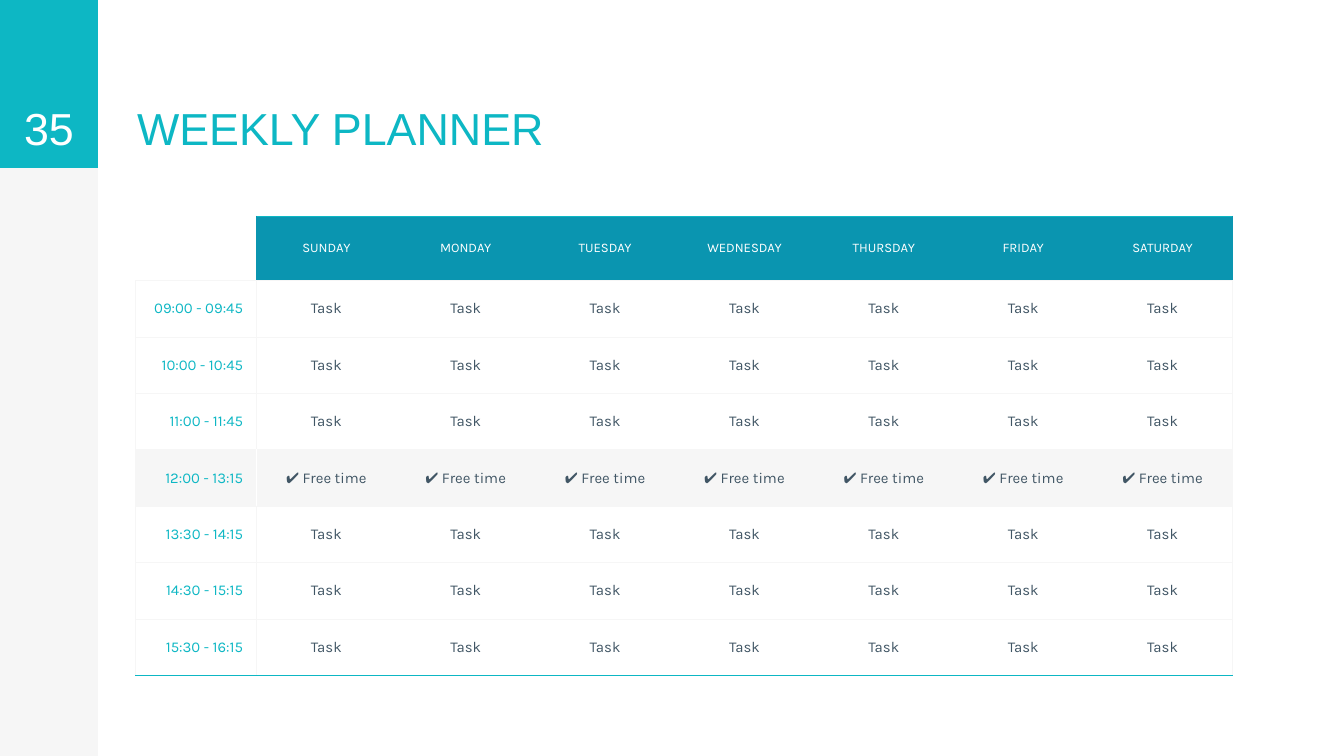
from dataclasses import dataclass
from typing import Optional

from lxml import etree
from pptx import Presentation
from pptx.dml.color import RGBColor
from pptx.enum.shapes import MSO_SHAPE
from pptx.enum.text import MSO_ANCHOR, MSO_AUTO_SIZE, PP_ALIGN
from pptx.oxml.ns import qn
from pptx.util import Inches, Pt

TEAL = RGBColor(0x0D, 0xB7, 0xC4)
DARK_TEAL = RGBColor(0x0A, 0x95, 0xB0)
PALE = RGBColor(0xF6, 0xF6, 0xF6)
SLATE = RGBColor(0x41, 0x56, 0x65)
WHITE = RGBColor(0xFF, 0xFF, 0xFF)

LEFT, CENTER, RIGHT = PP_ALIGN.LEFT, PP_ALIGN.CENTER, PP_ALIGN.RIGHT
RECT = MSO_SHAPE.RECTANGLE
BOTTOM, MIDDLE = MSO_ANCHOR.BOTTOM, MSO_ANCHOR.MIDDLE
NO_STYLE = "{2D5ABB26-0587-4C30-8999-92F81FD0307C}"

DAYS = ["SUNDAY", "MONDAY", "TUESDAY", "WEDNESDAY", "THURSDAY", "FRIDAY", "SATURDAY"]

SLIDE_W = 10
SLIDE_H = SLIDE_W * 9 / 16
SIDEBAR_W, HEADER_H = 0.73, 1.25
PLANNER_W, TIME_W = 8.16, 0.9
DAY_W = (PLANNER_W - TIME_W) / len(DAYS)
DAYS_H, SLOT_H = 0.48, 0.42


@dataclass
class Slot:
    time: str
    activity: str = "Task"
    fill: Optional[RGBColor] = None
    divider: RGBColor = PALE
    bottom: RGBColor = PALE


SLOTS = [
    Slot("09:00 - 09:45"),
    Slot("10:00 - 10:45"),
    Slot("11:00 - 11:45"),
    Slot("12:00 - 13:15", "✔ Free time", fill=PALE, divider=WHITE),
    Slot("13:30 - 14:15"),
    Slot("14:30 - 15:15"),
    Slot("15:30 - 16:15", bottom=TEAL),
]


def add_panel(s, height: float, color: RGBColor) -> None:
    sp = s.shapes.add_shape(RECT, 0, 0, Inches(SIDEBAR_W), Inches(height))
    sp.shadow.inherit = False
    sp.fill.solid()
    sp.fill.fore_color.rgb = color
    sp.line.fill.background()


def set_text(tf, text: str, size: float, font: str, color: RGBColor, align) -> None:
    p = tf.paragraphs[0]
    p.text = text
    p.alignment = align
    p.font.size = Pt(size)
    p.font.name = font
    p.font.color.rgb = color


def set_heading(sp, left: float, top: float, width: float, text: str,
                color: RGBColor, align) -> None:
    """Place a bottom-anchored heading in the top band."""
    sp.left, sp.top = Inches(left), Inches(top)
    sp.width, sp.height = Inches(width), Inches(HEADER_H)
    tf = sp.text_frame
    tf.word_wrap = True
    tf.auto_size = MSO_AUTO_SIZE.NONE
    tf.vertical_anchor = BOTTOM
    tf.margin_left = tf.margin_right = tf.margin_top = tf.margin_bottom = Inches(0.1)
    set_text(tf, text, 24, "Arial", color, align)


def set_borders(cell, **colors: Optional[RGBColor]) -> None:
    """Draw the sides given as L, R, T and B; other sides have no line."""
    tc_pr = cell._tc.get_or_add_tcPr()
    for side in "LRTB":
        ln = etree.SubElement(tc_pr, qn(f"a:ln{side}"), w=str(Pt(0.75)))
        color = colors.get(side)
        if color is None:
            etree.SubElement(ln, qn("a:noFill"))
        else:
            fill = etree.SubElement(ln, qn("a:solidFill"))
            etree.SubElement(fill, qn("a:srgbClr"), val=str(color))


def set_cell(cell, text: str, size: float, color: RGBColor, align,
             fill: Optional[RGBColor]) -> None:
    cell.margin_left = cell.margin_right = Inches(0.1)
    cell.margin_top = cell.margin_bottom = Inches(0.1)
    cell.vertical_anchor = MIDDLE
    set_text(cell.text_frame, text, size, "Karla", color, align)
    if fill is None:
        cell.fill.background()
    else:
        cell.fill.solid()
        cell.fill.fore_color.rgb = fill


def add_planner(s, left: float, top: float) -> None:
    height = DAYS_H + SLOT_H * len(SLOTS)
    table = s.shapes.add_table(len(SLOTS) + 1, len(DAYS) + 1, Inches(left),
                               Inches(top), Inches(PLANNER_W), Inches(height)).table
    table.first_row = table.horz_banding = False
    table._tbl.tblPr.find(qn("a:tableStyleId")).text = NO_STYLE
    for i, column in enumerate(table.columns):
        column.width = Inches(DAY_W if i else TIME_W)
    for i, row in enumerate(table.rows):
        row.height = Inches(SLOT_H if i else DAYS_H)

    corner = table.cell(0, 0)
    corner.margin_top = corner.margin_bottom = 0
    set_borders(corner, R=DARK_TEAL, B=PALE)
    corner.fill.background()

    last = len(DAYS)
    for c, day in enumerate(DAYS, 1):
        cell = table.cell(0, c)
        set_borders(cell, L=DARK_TEAL if c == 1 else None,
                    R=DARK_TEAL if c == last else None, T=TEAL, B=PALE)
        set_cell(cell, day, 7, WHITE, CENTER, DARK_TEAL)

    for r, slot in enumerate(SLOTS, 1):
        cell = table.cell(r, 0)
        set_borders(cell, L=PALE, R=slot.divider, T=PALE, B=slot.bottom)
        set_cell(cell, slot.time, 8, TEAL, RIGHT, slot.fill)
        for c in range(1, last + 1):
            cell = table.cell(r, c)
            set_borders(cell, L=slot.divider if c == 1 else None,
                        R=PALE if c == last else None, T=PALE, B=slot.bottom)
            set_cell(cell, slot.activity, 8, SLATE, CENTER, slot.fill)


def main() -> None:
    prs = Presentation()
    prs.slide_width, prs.slide_height = Inches(SLIDE_W), Inches(SLIDE_H)
    s = prs.slides.add_slide(prs.slide_layouts[5])

    add_panel(s, SLIDE_H, PALE)
    add_panel(s, HEADER_H, TEAL)
    set_heading(s.shapes.title, 0.92, 0, 3.89, "WEEKLY PLANNER", TEAL, LEFT)
    number = s.shapes.add_textbox(0, 0, Inches(SIDEBAR_W), Inches(HEADER_H))
    set_heading(number, 0, 0, SIDEBAR_W, "35", WHITE, CENTER)
    add_planner(s, 1.01, 1.61)

    prs.save("out.pptx")


if __name__ == "__main__":
    main()
